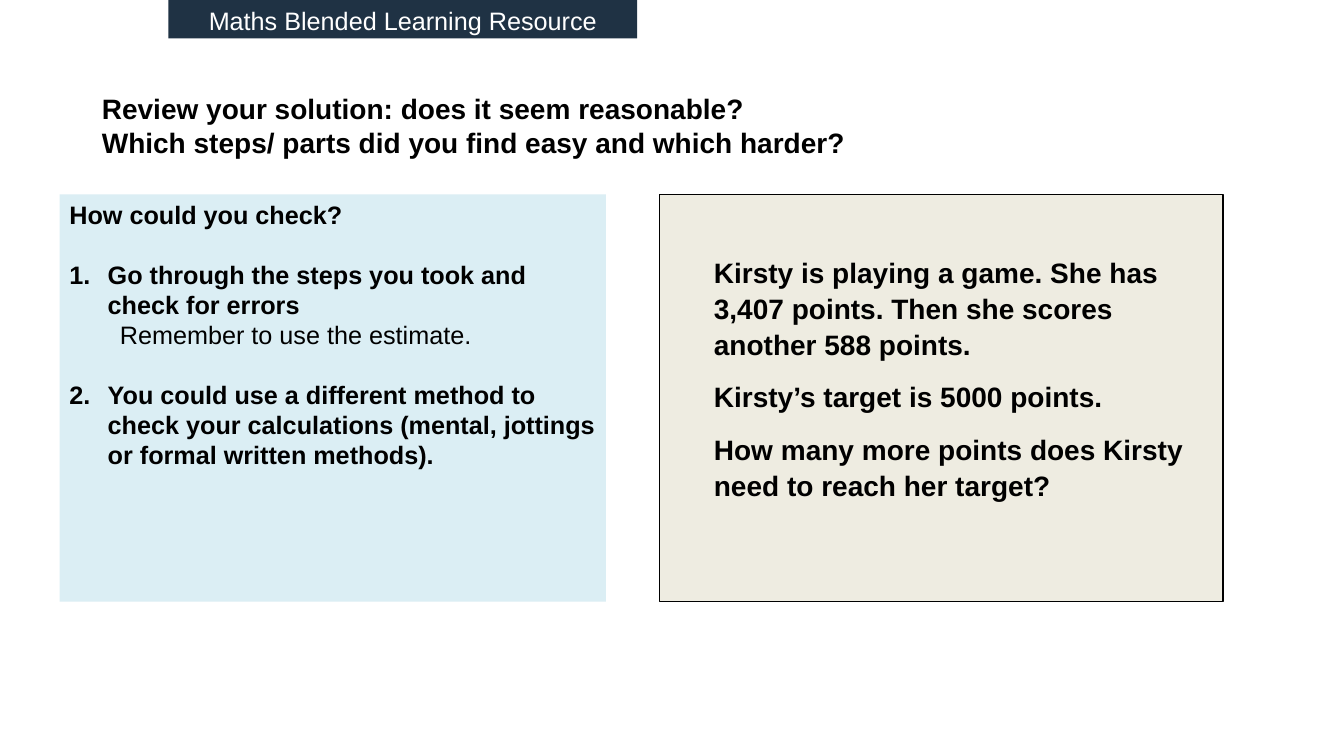
from lxml.etree import SubElement
from pptx import Presentation
from pptx.dml.color import RGBColor
from pptx.enum.shapes import MSO_SHAPE
from pptx.enum.text import MSO_ANCHOR, PP_ALIGN
from pptx.oxml.ns import qn
from pptx.util import Inches, Pt

BLACK = RGBColor(0x00, 0x00, 0x00)
WHITE = RGBColor(0xFF, 0xFF, 0xFF)
NAVY = RGBColor(0x1F, 0x32, 0x44)
PALE_BLUE = RGBColor(0xDB, 0xEE, 0xF4)
CREAM = RGBColor(0xEE, 0xEC, 0xE1)


def add_panel(left, top, width, height, fill):
    shape = slide.shapes.add_shape(
        MSO_SHAPE.RECTANGLE, Inches(left), Inches(top), Inches(width), Inches(height))
    shape.shadow.inherit = False
    shape.fill.solid()
    shape.fill.fore_color.rgb = fill
    shape.line.fill.background()
    shape.text_frame.word_wrap = True
    shape.text_frame.vertical_anchor = MSO_ANCHOR.TOP
    return shape


def format_paragraph(paragraph, size, bold=True, color=BLACK, align=PP_ALIGN.LEFT):
    paragraph.alignment = align
    for name, value in {"name": "Arial", "size": Pt(size), "bold": bold}.items():
        setattr(paragraph.font, name, value)
    paragraph.font.color.rgb = color


presentation = Presentation()
presentation.slide_width = Inches(13.33)
presentation.slide_height = Inches(7.5)
slide = presentation.slides.add_slide(presentation.slide_layouts[5])

# Title
title = slide.shapes.title
title.left, title.top, title.width, title.height = (
    Inches(value) for value in (0.91, 0.92, 9, 0.64))
title.text_frame.text = ("Review your solution: does it seem reasonable?\v"
                         "Which steps/ parts did you find easy and which harder?")
title.text_frame.vertical_anchor = MSO_ANCHOR.MIDDLE
format_paragraph(title.text_frame.paragraphs[0], 20)

# Checking advice: text, number, left margin, space before
advice = [
    ("How could you check?", None, 0, 0),
    ("Go through the steps you took and check for errors", 1, 0.38, 21),
    ("Remember to use the estimate.", None, 0.5, 0),
    ("You could use a different method to check your calculations "
     "(mental, jottings or formal written methods).", 2, 0.38, 21),
]
advice_panel = add_panel(0.59, 1.93, 5.42, 4.04, PALE_BLUE)
advice_panel.text_frame.text = "\n".join(row[0] for row in advice)
for paragraph, (text, number, margin, space) in zip(
        advice_panel.text_frame.paragraphs, advice):
    properties = paragraph._p.get_or_add_pPr()
    properties.set("marL", str(Inches(margin)))
    if space:
        paragraph.space_before = Pt(space)
    if number:
        properties.set("indent", str(-Inches(margin)))
        SubElement(properties, qn("a:buFont"), typeface="+mj-lt")
        SubElement(properties, qn("a:buAutoNum"), type="arabicPeriod", startAt=str(number))
    format_paragraph(paragraph, 18, bold=not text.startswith("Remember"))

# Resource banner
banner = add_panel(1.67, 0, 4.65, 0.38, NAVY)
banner.text_frame.text = "Maths Blended Learning Resource"
format_paragraph(banner.text_frame.paragraphs[0], 18, False, WHITE, PP_ALIGN.CENTER)

# Word problem
problem_panel = add_panel(6.54, 1.93, 5.59, 4.04, CREAM)
problem_panel.line.color.rgb = BLACK
problem_panel.line.width = Pt(0.75)
problem_panel.text_frame.margin_left = Inches(0.54)
problem_panel.text_frame.margin_top = Inches(0.58)
problem_panel.text_frame.text = "\n".join([
    "Kirsty is playing a game. She has 3,407 points. Then she scores another 588 points.",
    "Kirsty’s target is 5000 points.",
    "How many more points does Kirsty need to reach her target?",
])
for index, paragraph in enumerate(problem_panel.text_frame.paragraphs):
    paragraph.line_spacing = 1.07
    paragraph.space_after = Pt(8)
    if index:
        paragraph.space_before = Pt(4)
    format_paragraph(paragraph, 20)

presentation.save("out.pptx")
